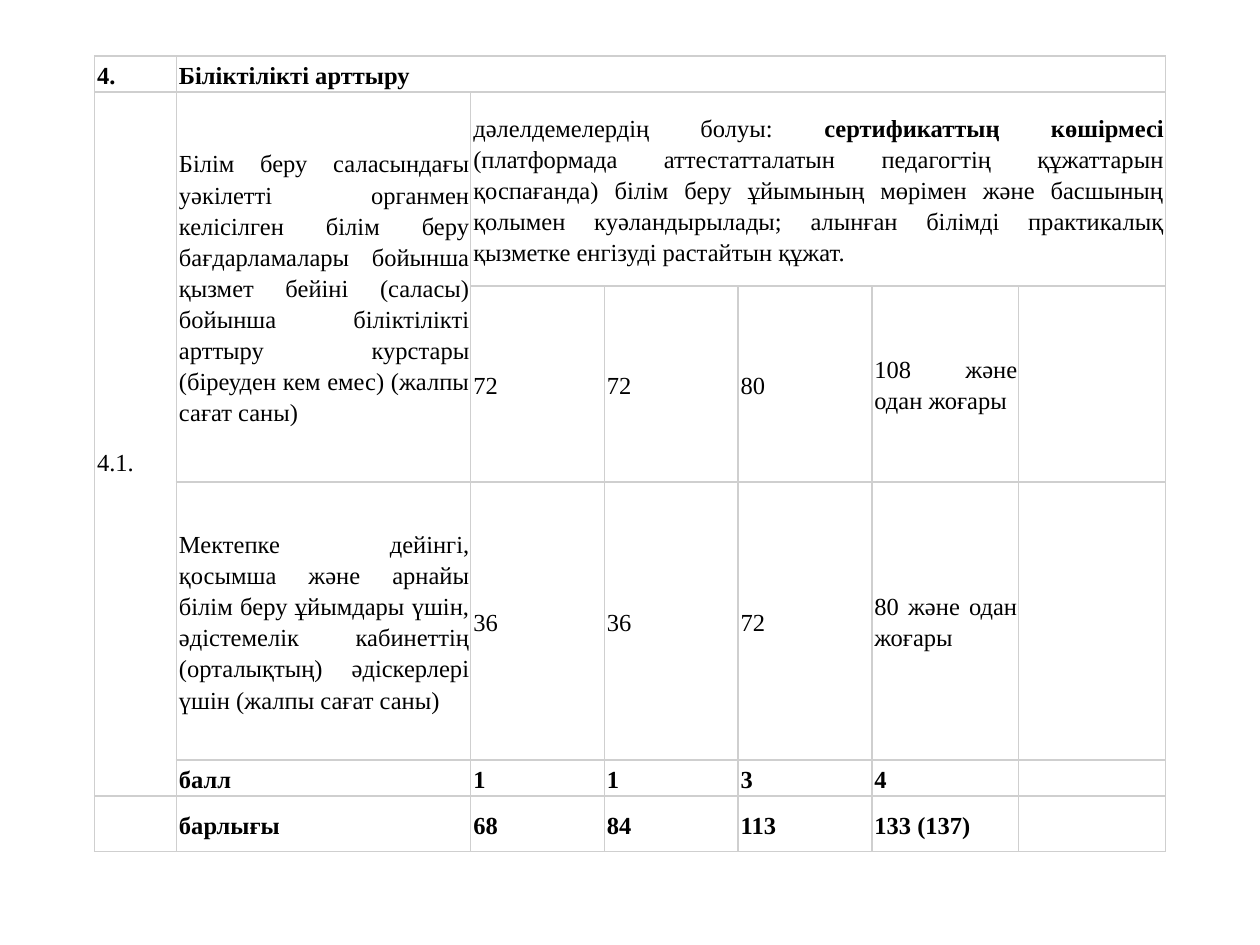
from lxml import etree
from pptx import Presentation
from pptx.dml.color import RGBColor
from pptx.enum.text import MSO_ANCHOR, PP_ALIGN
from pptx.oxml.ns import qn
from pptx.util import Pt

JUSTIFY = PP_ALIGN.JUSTIFY
MIDDLE = MSO_ANCHOR.MIDDLE
BLANK_LAYOUT = 6

FONT_NAME = "Times New Roman"
FONT_SIZE = 14
TEXT_COLOUR = "000000"
BORDER_COLOUR = "CFCFCF"
CELL_COLOUR = "FFFFFF"

COLUMN_WIDTHS = [46.8, 168.2, 76.4, 76.4, 76.4, 83.9, 83.9]
ROW_HEIGHTS = [20.6, 110.9, 112, 158.8, 20.6, 31.7]
# First row, first column, last row, last column
MERGES = [(0, 1, 0, 6), (1, 0, 4, 0), (1, 1, 2, 1), (1, 2, 1, 6)]
BOLD_ROWS = (0, 4, 5)

COURSES = (
    "Білім беру саласындағы уәкілетті органмен келісілген білім беру "
    "бағдарламалары бойынша қызмет бейіні (саласы) бойынша біліктілікті "
    "арттыру курстары (біреуден кем емес) (жалпы сағат саны)"
)
PRESCHOOL = (
    "Мектепке дейінгі, қосымша және арнайы білім беру ұйымдары үшін, "
    "әдістемелік кабинеттің (орталықтың) әдіскерлері үшін (жалпы сағат саны)"
)
# Odd parts between asterisks are bold
EVIDENCE = (
    "дәлелдемелердің болуы: *сертификаттың көшірмесі* (платформада "
    "аттестатталатын педагогтің құжаттарын қоспағанда) білім беру ұйымының "
    "мөрімен және басшының қолымен куәландырылады; алынған білімді "
    "практикалық қызметке енгізуді растайтын құжат."
)
ROWS = [
    ["4.", "Біліктілікті арттыру", "", "", "", "", ""],
    ["4.1.", COURSES, EVIDENCE, "", "", "", ""],
    ["", "", "72", "72", "80", "108 және одан жоғары", ""],
    ["", PRESCHOOL, "36", "36", "72", "80 және одан жоғары", ""],
    ["", "балл", "1", "1", "3", "4", ""],
    ["", "барлығы", "68", "84", "113", "133 (137)", ""],
]


def colour(hex_string):
    return RGBColor.from_string(hex_string)


def add_borders(cell):
    properties = cell._tc.get_or_add_tcPr()
    for side in ("lnL", "lnR", "lnT", "lnB"):
        line = etree.SubElement(properties, qn(f"a:{side}"), w=str(Pt(1)))
        fill = etree.SubElement(line, qn("a:solidFill"))
        etree.SubElement(fill, qn("a:srgbClr"), val=BORDER_COLOUR)


def format_cell(cell):
    cell.margin_left = cell.margin_right = Pt(0.75)
    cell.margin_top = cell.margin_bottom = Pt(0.75)
    cell.vertical_anchor = MIDDLE
    add_borders(cell)
    cell.fill.solid()
    cell.fill.fore_color.rgb = colour(CELL_COLOUR)


def write_cell(cell, text, bold):
    paragraph = cell.text_frame.paragraphs[0]
    paragraph.alignment = JUSTIFY
    paragraph.line_spacing = 1.15
    paragraph.space_after = Pt(1)
    paragraph._p.get_or_add_pPr().set("marL", str(Pt(0.75)))
    if not text:
        # Keeps an empty cell from stretching its row
        end = etree.SubElement(paragraph._p, qn("a:endParaRPr"))
        end.set("sz", str(FONT_SIZE * 100))
        return
    for index, part in enumerate(text.split("*")):
        run = paragraph.add_run()
        run.text = part
        run.font.name = FONT_NAME
        run.font.size = Pt(FONT_SIZE)
        run.font.bold = bold or index % 2 == 1
        run.font.color.rgb = colour(TEXT_COLOUR)


def add_criteria_table(slide):
    frame = slide.shapes.add_table(
        len(ROW_HEIGHTS), len(COLUMN_WIDTHS), Pt(54), Pt(32),
        Pt(sum(COLUMN_WIDTHS)), Pt(sum(ROW_HEIGHTS)))
    table = frame.table
    table.first_row = table.horz_banding = False
    for column, width in zip(table.columns, COLUMN_WIDTHS):
        column.width = Pt(width)
    for row, height in zip(table.rows, ROW_HEIGHTS):
        row.height = Pt(height)
    for row_index, texts in enumerate(ROWS):
        for column_index, text in enumerate(texts):
            cell = table.cell(row_index, column_index)
            format_cell(cell)
            write_cell(cell, text, row_index in BOLD_ROWS)
    for top, left, bottom, right in MERGES:
        table.cell(top, left).merge(table.cell(bottom, right))
    # The item number sits a little below the middle
    table.cell(1, 0).margin_top = Pt(20)


def main():
    presentation = Presentation()
    presentation.slide_width = Pt(720)
    presentation.slide_height = Pt(540)
    slide = presentation.slides.add_slide(
        presentation.slide_layouts[BLANK_LAYOUT])
    add_criteria_table(slide)
    presentation.save("out.pptx")


if __name__ == "__main__":
    main()
